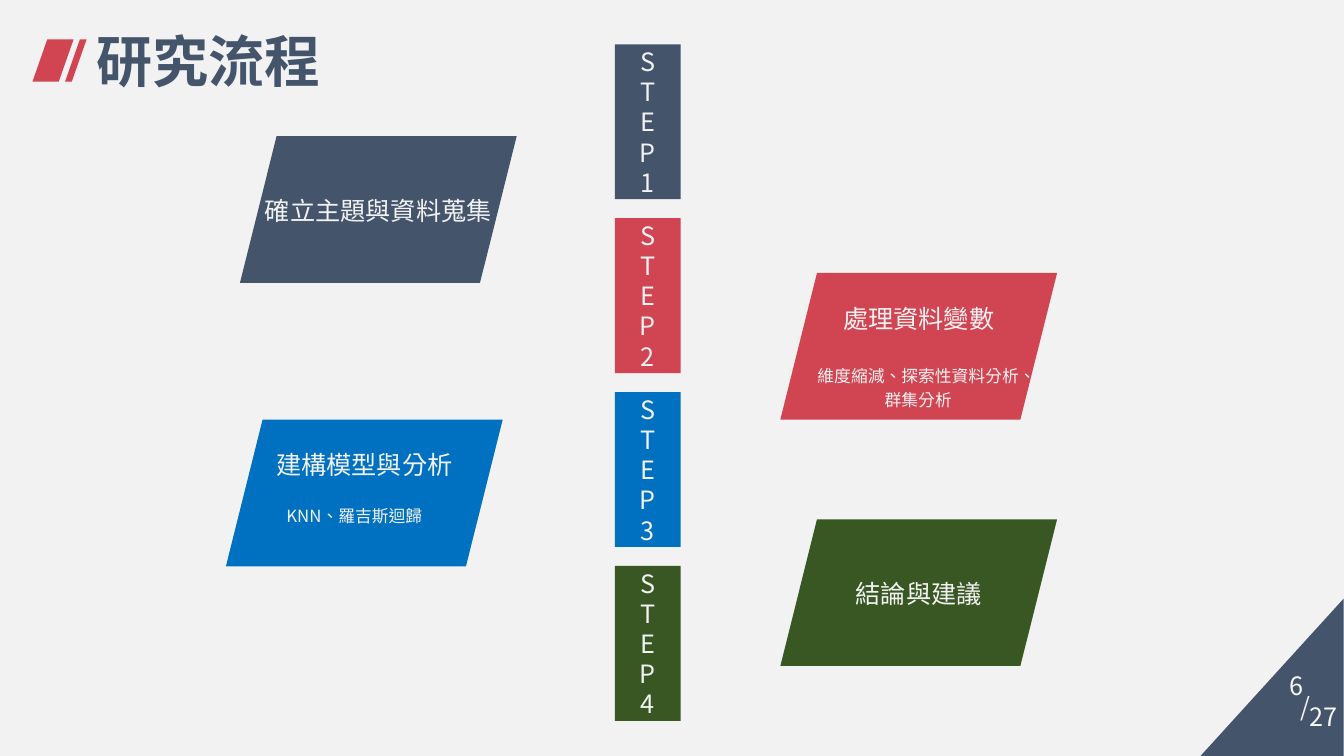
"""Build the research process slide with four steps."""
import pptx
import pptx.dml.color
import pptx.enum.shapes
import pptx.enum.text
import pptx.util
from lxml import etree

Pt = pptx.util.Pt
SHAPES = pptx.enum.shapes.MSO_SHAPE
ALIGN = pptx.enum.text.PP_ALIGN
ANCHOR = pptx.enum.text.MSO_ANCHOR

FONT = "Noto Sans CJK SC"
NAVY, RED, BLUE, GREEN = "44546B", "D14553", "0070C0", "385723"
LIGHT, WHITE = "F2F2F2", "F8F8F8"

TITLE = "研究流程"
STEP_COLORS = [NAVY, RED, BLUE, GREEN]
STEP_LEFT, STEP_TOP, STEP_PITCH = 439.2, 31.7, 124.2
STEP_WIDTH, STEP_HEIGHT = 47, 110.6

CARD_WIDTH, CARD_HEIGHT, HEADING_HEIGHT = 197.7, 104.8, 29
CARDS = [
    {"left": 171.4, "top": 97.2, "color": NAVY, "heading": "確立主題與資料蒐集"},
    {"left": 557.4, "top": 195, "color": RED, "heading": "處理資料變數",
     "details": ["維度縮減、探索性資料分析、", "群集分析"],
     "detail_box": (571.7, 254.9, 168.5, 41)},
    {"left": 161.4, "top": 299.7, "color": BLUE, "heading": "建構模型與分析",
     "details": ["KNN、羅吉斯迴歸"],
     "detail_box": (175.7, 355, 154.8, 23)},
    {"left": 557.4, "top": 370.9, "color": GREEN, "heading": "結論與建議"},
]

MARK_TOP, MARK_BOTTOM, MARK_SLANT = 28.1, 58.3, 10.6
MARKS = [(33.8, 18.8), (57.1, 4.8)]

PAGE_TEXTS = [
    ("6", (913.7, 475.2, 15.8, 29), WHITE),
    ("/", (921.6, 490.3, 15.8, 29), LIGHT),
    ("27", (927.4, 497.5, 36, 29), WHITE),
]


def color(value):
    return pptx.dml.color.RGBColor.from_string(value)


def paint(shape, fill):
    shape.shadow.inherit = False
    shape.fill.solid()
    shape.fill.fore_color.rgb = color(fill)
    shape.line.fill.background()


def write(shape, lines, size=18, fill=LIGHT, bold=False, align=ALIGN.CENTER,
          anchor=ANCHOR.TOP, wrap=True, spacing=None, inset=None):
    frame = shape.text_frame
    frame.word_wrap = wrap
    frame.vertical_anchor = anchor
    if inset is not None:
        frame.margin_left = frame.margin_right = Pt(inset)
        frame.margin_top = frame.margin_bottom = Pt(inset)
    for index, line in enumerate(lines):
        paragraph = frame.paragraphs[0] if index == 0 else frame.add_paragraph()
        paragraph.alignment = align
        if spacing:
            paragraph.line_spacing = spacing
        run = paragraph.add_run()
        run.text = line
        run.font.size = Pt(size)
        run.font.bold = bold
        run.font.color.rgb = color(fill)
        run.font.name = FONT
        properties = run.font._element
        properties.set("lang", "zh-TW")
        tag = pptx.oxml.ns.qn("a:ea")
        etree.SubElement(properties, tag).set("typeface", FONT)


def add_block(slide, kind, box, fill):
    shape = slide.shapes.add_shape(kind, *map(Pt, box))
    paint(shape, fill)
    return shape


def add_text(slide, box, lines, **text_format):
    shape = slide.shapes.add_textbox(*map(Pt, box))
    write(shape, lines, **text_format)


def add_title(slide):
    for left, width in MARKS:
        corners = [(left + width, MARK_TOP),
                   (left + width - MARK_SLANT, MARK_BOTTOM),
                   (left - MARK_SLANT, MARK_BOTTOM)]
        builder = slide.shapes.build_freeform(Pt(left), Pt(MARK_TOP))
        builder.add_line_segments([(Pt(x), Pt(y)) for x, y in corners])
        paint(builder.convert_to_shape(), RED)
    title = slide.shapes.title
    title.left, title.top = Pt(61.9), Pt(15.1)
    title.width, title.height = Pt(176.4), Pt(55.7)
    write(title, [TITLE], size=40, fill=NAVY, bold=True, align=ALIGN.LEFT,
          anchor=ANCHOR.MIDDLE, wrap=False)


def add_steps(slide):
    for index, fill in enumerate(STEP_COLORS):
        box = (STEP_LEFT, STEP_TOP + index * STEP_PITCH, STEP_WIDTH, STEP_HEIGHT)
        step = add_block(slide, SHAPES.RECTANGLE, box, fill)
        write(step, f"STEP{index + 1}", anchor=ANCHOR.MIDDLE, inset=0)


def add_cards(slide):
    for card in CARDS:
        left, top = card["left"], card["top"]
        add_block(slide, SHAPES.PARALLELOGRAM,
                  (left, top, CARD_WIDTH, CARD_HEIGHT), card["color"])
        has_details = "details" in card
        offset = 18 if has_details else (CARD_HEIGHT - HEADING_HEIGHT) / 2 + 0.8
        add_text(slide, (left, top + offset, CARD_WIDTH, HEADING_HEIGHT),
                 [card["heading"]])
        if has_details:
            add_text(slide, card["detail_box"], card["details"], size=12, spacing=1.2)


def add_page_number(slide):
    corner = add_block(slide, SHAPES.RIGHT_TRIANGLE, (852.5, 432.7, 112.3, 102.2), NAVY)
    corner.rotation = 270
    for text, box, fill in PAGE_TEXTS:
        add_text(slide, box, [text], fill=fill)


def main():
    presentation = pptx.Presentation()
    presentation.slide_width = Pt(960)
    presentation.slide_height = Pt(540)
    slide = presentation.slides.add_slide(presentation.slide_layouts[5])
    slide.background.fill.solid()
    slide.background.fill.fore_color.rgb = color(LIGHT)
    add_title(slide)
    add_steps(slide)
    add_cards(slide)
    add_page_number(slide)
    presentation.save("out.pptx")


if __name__ == "__main__":
    main()
